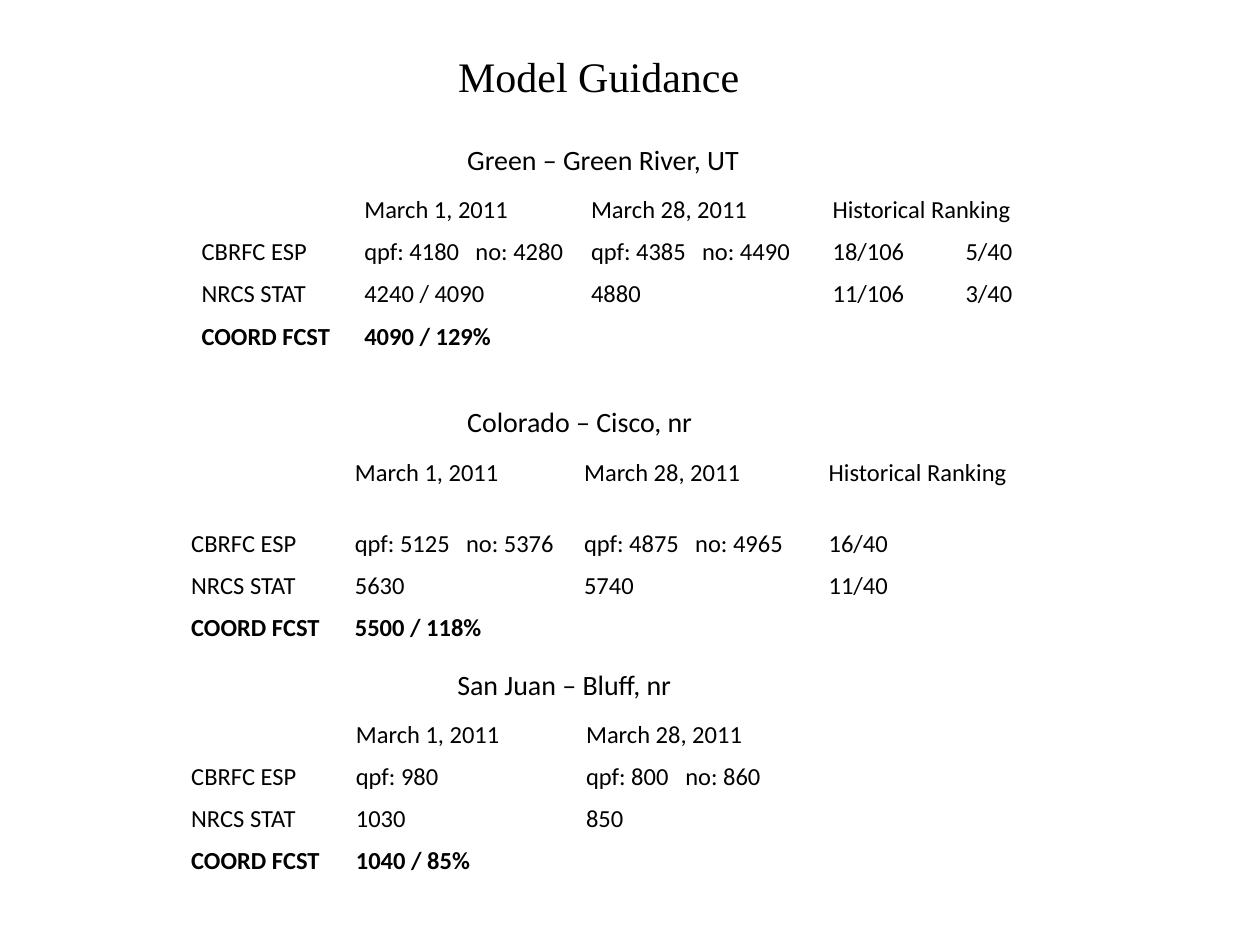
from lxml import etree
from pptx import Presentation
from pptx.dml.color import RGBColor
from pptx.enum.text import PP_ALIGN
from pptx.oxml.ns import qn
from pptx.util import Cm, Pt

CENTER = PP_ALIGN.CENTER
BLACK, WHITE = "000000", "FFFFFF"
ROW_H = 0.85
RANK_TAB = 2.68


def rgb(value):
    return RGBColor.from_string(value)


def write(p, text, size, font="Calibri", bold=None, tab=None):
    """Fill a paragraph; tab is an optional tab stop in cm."""
    if tab:
        tabs = etree.SubElement(p._p.get_or_add_pPr(), qn("a:tabLst"))
        etree.SubElement(tabs, qn("a:tab"), pos=str(Cm(tab)), algn="l")
    p.text = text
    p.font.name = font
    p.font.size = Pt(size)
    p.font.bold = bold
    p.font.color.rgb = rgb(BLACK)


HEADER = ["", "March 1, 2011", "March 28, 2011", "Historical Ranking"]

# heading, heading box (left, top, width), table left and top,
# column widths, header row height, tab stop for "no:", body rows
BASINS = [
    ("Green – Green River, UT", (9.17, 2.75, 6.07), (3.81, 3.81),
     [3.28, 4.57, 4.87, 4.87], ROW_H, 2.24,
     [["CBRFC ESP", "qpf: 4180\tno: 4280", "qpf: 4385\tno: 4490", "18/106\t5/40"],
      ["NRCS STAT", "4240 / 4090", "4880", "11/106\t3/40"],
      ["COORD FCST", "4090 / 129%", "", ""]]),
    ("Colorado – Cisco, nr", (9.17, 8.04, 5.1), (3.6, 9.1),
     [3.3, 4.62, 4.93, 4.93], 1.44, 2.24,
     [["CBRFC ESP", "qpf: 5125\tno: 5376", "qpf: 4875\tno: 4965", "16/40"],
      ["NRCS STAT", "5630", "5740", "11/40"],
      ["COORD FCST", "5500 / 118%", "", ""]]),
    ("San Juan – Bluff, nr", (8.97, 13.33, 4.88), (3.6, 14.39),
     [3.32, 4.64, 4.95], ROW_H, 2,
     [["CBRFC ESP", "qpf: 980", "qpf: 800\tno: 860"],
      ["NRCS STAT", "1030", "850"],
      ["COORD FCST", "1040 / 85%", ""]]),
]

prs = Presentation()
prs.slide_width, prs.slide_height = Cm(25.4), Cm(19.05)
s = prs.slides.add_slide(prs.slide_layouts[6])

title = s.shapes.add_textbox(Cm(8.47), Cm(0.9), Cm(7.2), Cm(1.27))
title.text_frame.word_wrap = True
p = title.text_frame.paragraphs[0]
p.alignment = CENTER
write(p, "Model Guidance", 24, "Times New Roman")

for heading, (left, top, width), (x, y), widths, header_h, no_tab, body in BASINS:
    box = s.shapes.add_textbox(Cm(left), Cm(top), Cm(width), Cm(0.94))
    box.text_frame.word_wrap = False
    write(box.text_frame.paragraphs[0], heading, 16)

    rows = [HEADER[:len(widths)]] + body
    heights = [header_h] + [ROW_H] * len(body)
    table = s.shapes.add_table(len(rows), len(widths), Cm(x), Cm(y),
                               Cm(sum(widths)), Cm(sum(heights))).table
    table.first_row = table.horz_banding = False
    for column, width in zip(table.columns, widths):
        column.width = Cm(width)
    for row, height, texts in zip(table.rows, heights, rows):
        row.height = Cm(height)
        bold = texts[0] == "COORD FCST"
        for i, (cell, text) in enumerate(zip(row.cells, texts)):
            cell.fill.solid()
            cell.fill.fore_color.rgb = rgb(WHITE)
            if not text:
                cell.margin_top = cell.margin_bottom = 0
                continue
            tab = (RANK_TAB if i == 3 else no_tab) if "\t" in text else None
            write(cell.text_frame.paragraphs[0], text, 14, bold=bold, tab=tab)

prs.save("out.pptx")
